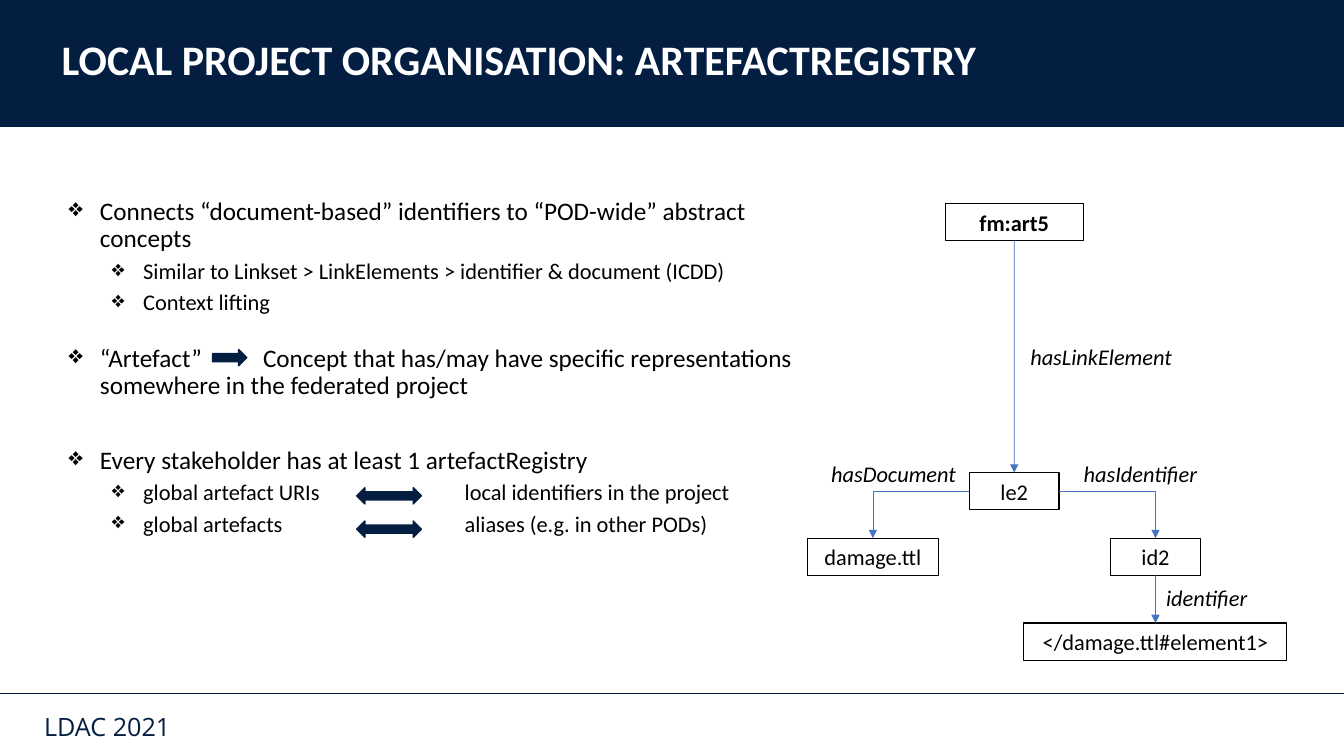
from dataclasses import dataclass

from lxml import etree
from pptx import Presentation
from pptx.dml.color import RGBColor
from pptx.enum.shapes import MSO_CONNECTOR, MSO_SHAPE
from pptx.enum.text import MSO_ANCHOR, PP_ALIGN
from pptx.oxml.ns import qn
from pptx.util import Cm, Pt

STRAIGHT, ELBOW = MSO_CONNECTOR.STRAIGHT, MSO_CONNECTOR.ELBOW
RECT, RIGHT_ARROW, TWO_WAY_ARROW = (
    MSO_SHAPE.RECTANGLE, MSO_SHAPE.RIGHT_ARROW, MSO_SHAPE.LEFT_RIGHT_ARROW)
LEFT, CENTER = PP_ALIGN.LEFT, PP_ALIGN.CENTER
MIDDLE, TOP_ANCHOR = MSO_ANCHOR.MIDDLE, MSO_ANCHOR.TOP
TOP, WEST, BOTTOM, EAST = range(4)


@dataclass(frozen=True)
class Theme:
    navy: RGBColor = RGBColor(0x04, 0x1E, 0x42)
    blue: RGBColor = RGBColor(0x44, 0x72, 0xC4)
    black: RGBColor = RGBColor(0, 0, 0)
    white: RGBColor = RGBColor(255, 255, 255)
    font: str = "Calibri"
    footer_font: str = "Open Sans"
    title: int = 30
    body: int = 18
    small: int = 16


THEME = Theme()
BULLETS = [
    (0, "Connects “document-based” identifiers to “POD-wide” abstract concepts", 0, None),
    (1, "Similar to Linkset > LinkElements > identifier & document (ICDD)", 5, None),
    (1, "Context lifting", 5, None),
    (0, "“Artefact”\tConcept that has/may have specific representations "
        "somewhere in the federated project", 21.5, 5.08),
    (0, "Every stakeholder has at least 1 artefactRegistry", 34, None),
    (1, "global artefact URIs\tlocal identifiers in the project", 5, 10.16),
    (1, "global artefacts\taliases (e.g. in other PODs)", 5, 10.16),
]
NODES = {
    "fm:art5": (25.56, 5.13, 3.48),
    "le2": (25.56, 11.91, 2.26),
    "damage.ttl": (22.0, 13.56, 3.3),
    "id2": (29.12, 13.56, 2.26),
    "</damage.ttl#element1>": (29.12, 15.7, 6.63),
}
EDGES = [
    ("fm:art5", BOTTOM, "le2", STRAIGHT),
    ("le2", WEST, "damage.ttl", ELBOW),
    ("le2", EAST, "id2", ELBOW),
    ("id2", BOTTOM, "</damage.ttl#element1>", STRAIGHT),
]
EDGE_LABELS = [
    ("hasLinkElement", 25.25, 8.53),
    ("hasDocument", 20.02, 11.48),
    ("hasIdentifier", 26.24, 11.48),
    ("identifier", 27.91, 14.6),
]


def write(p, text, size=THEME.small, color=THEME.black, font=THEME.font,
          bold=False, italic=False, align=LEFT, line_spacing=None, before=0):
    p.alignment, p.line_spacing, p.space_before = align, line_spacing, Pt(before)
    r = p.add_run()
    r.text = text
    f = r.font
    f.name, f.size, f.bold, f.italic = font, Pt(size), bold, italic
    f.color.rgb = color


class SlideBuilder:
    def __init__(self, prs, theme):
        self.theme = theme
        self.s = prs.slides.add_slide(prs.slide_layouts[5])

    def title(self, text, x, y, w, h):
        sp = self.s.shapes.title
        sp.left, sp.top, sp.width, sp.height = Cm(x), Cm(y), Cm(w), Cm(h)
        tf = sp.text_frame
        tf.word_wrap, tf.vertical_anchor = True, MIDDLE
        write(tf.paragraphs[0], text, size=self.theme.title, bold=True,
              color=self.theme.white, line_spacing=0.9)

    def shape(self, kind, x, y, w, h, fill=None, line=None, weight=1):
        sp = self.s.shapes.add_shape(kind, Cm(x), Cm(y), Cm(w), Cm(h))
        sp.shadow.inherit = False
        if fill is None:
            sp.fill.background()
        else:
            sp.fill.solid()
            sp.fill.fore_color.rgb = fill
        if line is None:
            sp.line.fill.background()
        else:
            sp.line.color.rgb, sp.line.width = line, Pt(weight)
        return sp

    def band(self, *box):
        band = self.shape(RECT, *box, fill=self.theme.navy)
        self.s.shapes.title.element.addprevious(band.element)

    def block_arrow(self, kind, *box):
        self.shape(kind, *box, fill=self.theme.navy, line=self.theme.navy)

    def node(self, text, center, y, w, bold=False):
        sp = self.shape(RECT, center - w / 2, y, w, 0.94,
                        line=self.theme.black, weight=0.75)
        sp.text_frame.word_wrap = True
        write(sp.text_frame.paragraphs[0], text, bold=bold, align=CENTER)
        return sp

    def text_frame(self, x, y, w, h, anchor=TOP_ANCHOR):
        tf = self.s.shapes.add_textbox(Cm(x), Cm(y), Cm(w), Cm(h)).text_frame
        tf.word_wrap, tf.vertical_anchor = True, anchor
        return tf

    def label(self, text, x, y, w, h, anchor=TOP_ANCHOR, **style):
        write(self.text_frame(x, y, w, h, anchor).paragraphs[0], text, **style)

    def bullets(self, items, *box):
        tf = self.text_frame(*box)
        for i, (level, text, before, tab) in enumerate(items):
            p = tf.add_paragraph() if i else tf.paragraphs[0]
            p.level = level
            write(p, text, size=self.theme.small if level else self.theme.body,
                  line_spacing=0.9, before=before)
            pPr = p._p.get_or_add_pPr()
            pPr.set("marL", str(Cm(2.06 if level else 0.97)))
            pPr.set("indent", str(-Cm(0.79)))
            etree.SubElement(pPr, qn("a:buChar")).set("char", "❖")
            if tab:
                stops = etree.SubElement(pPr, qn("a:tabLst"))
                stop = etree.SubElement(stops, qn("a:tab"))
                stop.set("pos", str(Cm(tab)))
                stop.set("algn", "l")

    def line(self, kind, color, weight, x1=0, y1=0, x2=0, y2=0):
        c = self.s.shapes.add_connector(kind, Cm(x1), Cm(y1), Cm(x2), Cm(y2))
        c.line.color.rgb, c.line.width = color, Pt(weight)
        etree.SubElement(c.element.spPr, qn("a:effectLst"))
        return c

    def edge(self, start, side, end, kind):
        c = self.line(kind, self.theme.blue, 0.5)
        c.begin_connect(start, side)
        c.end_connect(end, TOP)
        if kind == ELBOW:
            c.element.spPr.find(qn("a:prstGeom")).set("prst", "bentConnector2")
        tail = etree.SubElement(c.line._get_or_add_ln(), qn("a:tailEnd"))
        tail.set("type", "triangle")


def main():
    prs = Presentation()
    prs.slide_width, prs.slide_height = Cm(33.87), Cm(19.05)
    b = SlideBuilder(prs, THEME)

    b.band(0, 0, 33.87, 3.2)
    b.title("LOCAL PROJECT ORGANISATION: ARTEFACTREGISTRY", 1.3, 0, 29.18, 3.12)
    b.line(STRAIGHT, THEME.navy, 1, 0, 17.47, 33.87, 17.47)
    b.label("LDAC 2021", 0.86, 17.58, 8.38, 1.57, anchor=MIDDLE, size=THEME.body,
            color=THEME.navy, font=THEME.footer_font, line_spacing=0.9)

    b.bullets(BULLETS, 1.3, 4.88, 19.2, 11.05)
    b.block_arrow(RIGHT_ARROW, 5.36, 8.81, 0.86, 0.41)
    for y in (12.29, 13.13):
        b.block_arrow(TWO_WAY_ARROW, 8.99, y, 1.63, 0.41)

    nodes = {name: b.node(name, *place, bold=name == "fm:art5")
             for name, place in NODES.items()}
    for start, side, end, kind in EDGES:
        b.edge(nodes[start], side, nodes[end], kind)
    for text, x, y in EDGE_LABELS:
        b.label(text, x, y, 5, 0.94, italic=True, align=CENTER)

    prs.save("out.pptx")


if __name__ == "__main__":
    main()
